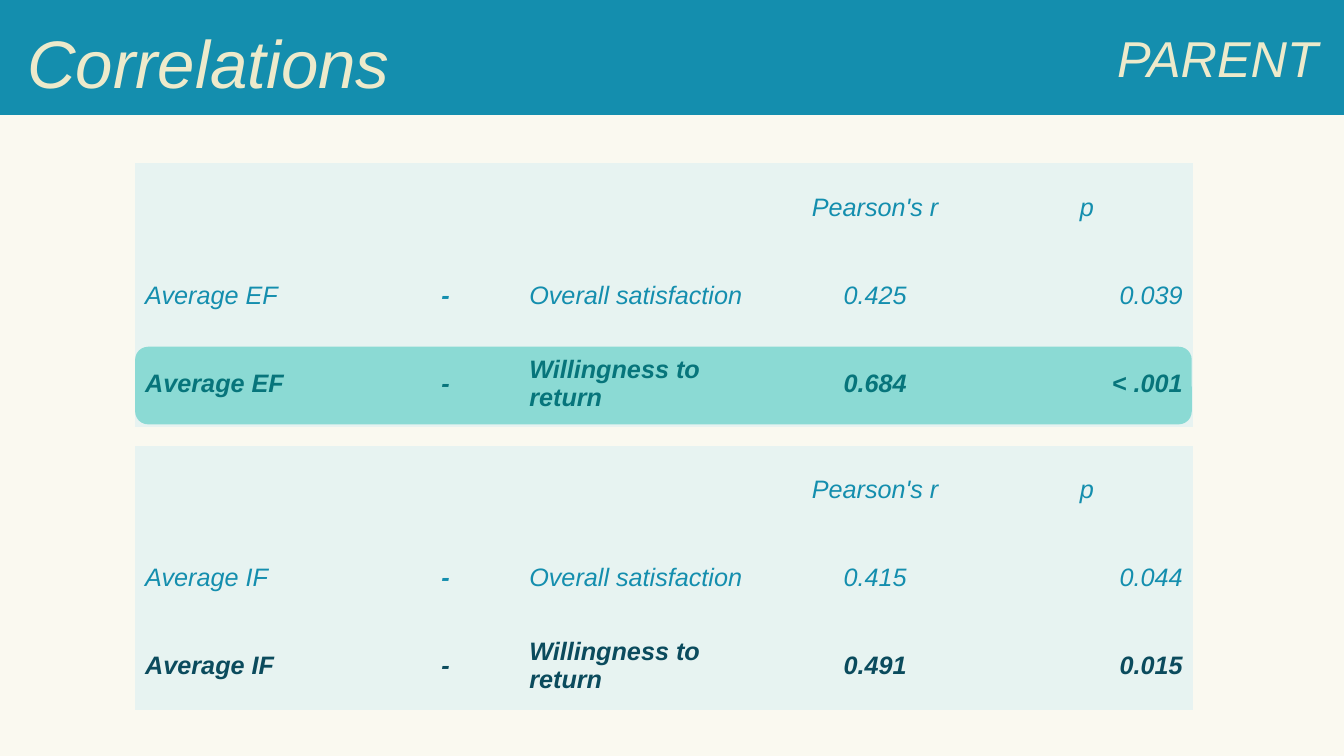
from lxml.etree import SubElement
from pptx import Presentation
from pptx.dml.color import RGBColor
from pptx.enum.shapes import MSO_SHAPE
from pptx.enum.text import MSO_ANCHOR, MSO_AUTO_SIZE, PP_ALIGN
from pptx.oxml.ns import qn
from pptx.util import Inches, Pt

TITLE = "Correlations"
GROUP = "PARENT"
HEADER = ("", "", "", "Pearson's r", "p")
TABLES = [
    [HEADER,
     ("Average EF", "-", "Overall satisfaction", "0.425", "0.039"),
     ("Average EF", "-", "Willingness to return", "0.684", "< .001")],
    [HEADER,
     ("Average IF", "-", "Overall satisfaction", "0.415", "0.044"),
     ("Average IF", "-", "Willingness to return", "0.491", "0.015")],
]
COLORS = {"background": "FAF9F0", "band": "148EAE", "heading": "EDEACB",
          "cell": "E7F3F1", "text": "148EAE", "strong": "0B4B5D",
          "highlight": "03B5AA"}
FONT = "Arial"
COLUMN_WIDTHS = (2.35, 1.46, 2.48, 2.1, 2.1)
ALIGNMENTS = (PP_ALIGN.LEFT, PP_ALIGN.CENTER, PP_ALIGN.LEFT,
              PP_ALIGN.CENTER, PP_ALIGN.RIGHT)
TABLE_LEFT, TABLE_TOP, TABLE_WIDTH, TABLE_HEIGHT = 1.34, 1.62, 10.48, 2.62
TABLE_STEP = 2.8
PLAIN_STYLE = "{2D5ABB26-0587-4C30-8999-92F81FD0307C}"


def rgb(name):
    return RGBColor.from_string(COLORS[name])


def box(left, top, width, height):
    return [Inches(value) for value in (left, top, width, height)]


def write(paragraph, text, size, color, align, bold=False):
    paragraph.text = text
    paragraph.alignment = align
    font = paragraph.font
    font.name, font.size, font.italic, font.bold = FONT, Pt(size), True, bold
    font.color.rgb = rgb(color)


def add_block(slide, preset, place, color):
    block = slide.shapes.add_shape(preset, *box(*place))
    block.shadow.inherit = False
    block.fill.solid()
    block.fill.fore_color.rgb = rgb(color)
    block.line.fill.background()
    return block


def write_heading(shape, text, size, align):
    frame = shape.text_frame
    frame.word_wrap = True
    frame.auto_size = MSO_AUTO_SIZE.SHAPE_TO_FIT_TEXT
    frame.vertical_anchor = MSO_ANCHOR.TOP
    paragraph = frame.paragraphs[0]
    write(paragraph, text, size, "heading", align)
    paragraph.line_spacing = 1.0
    paragraph.space_before = Pt(0)


def add_correlations(slide, rows, top):
    frame = slide.shapes.add_table(
        len(rows), len(HEADER), *box(TABLE_LEFT, top, TABLE_WIDTH, TABLE_HEIGHT))
    table = frame.table
    table.first_row = table.horz_banding = False
    # Plain style without borders
    frame.element.find(".//" + qn("a:tableStyleId")).text = PLAIN_STYLE
    for column, width in zip(table.columns, COLUMN_WIDTHS):
        column.width = Inches(width)
    for r, row in enumerate(rows):
        table.rows[r].height = Inches(TABLE_HEIGHT / len(rows))
        strong = r == len(rows) - 1
        for c, text in enumerate(row):
            cell = table.cell(r, c)
            cell.fill.solid()
            cell.fill.fore_color.rgb = rgb("cell")
            cell.vertical_anchor = MSO_ANCHOR.MIDDLE
            if text:
                write(cell.text_frame.paragraphs[0], text, 18,
                      "strong" if strong else "text",
                      PP_ALIGN.CENTER if r == 0 else ALIGNMENTS[c],
                      bold=strong or text == "-")


def main():
    presentation = Presentation()
    presentation.slide_width = Inches(13.33)
    presentation.slide_height = Inches(7.5)
    slide = presentation.slides.add_slide(presentation.slide_layouts[5])
    slide.background.fill.solid()
    slide.background.fill.fore_color.rgb = rgb("background")

    # Heading band, behind the title
    title = slide.shapes.title
    band = add_block(slide, MSO_SHAPE.RECTANGLE, (0, -0.02, 13.33, 1.16), "band")
    title.element.addprevious(band.element)
    title.left, title.top, title.width, title.height = box(0.17, 0.16, 13.17, 0.91)
    write_heading(title, TITLE, 48, PP_ALIGN.LEFT)
    group = slide.shapes.add_textbox(*box(0, 0.22, 13.17, 0.71))
    write_heading(group, GROUP, 36, PP_ALIGN.RIGHT)

    # Correlation tables
    for i, rows in enumerate(TABLES):
        add_correlations(slide, rows, TABLE_TOP + i * TABLE_STEP)

    # Translucent highlight over the strongest correlation
    highlight = add_block(slide, MSO_SHAPE.ROUNDED_RECTANGLE,
                          (TABLE_LEFT, 3.44, TABLE_WIDTH, 0.77), "highlight")
    tint = highlight.element.spPr.find(qn("a:solidFill")).find(qn("a:srgbClr"))
    SubElement(tint, qn("a:alpha"), val="40000")

    presentation.save("out.pptx")


if __name__ == "__main__":
    main()
